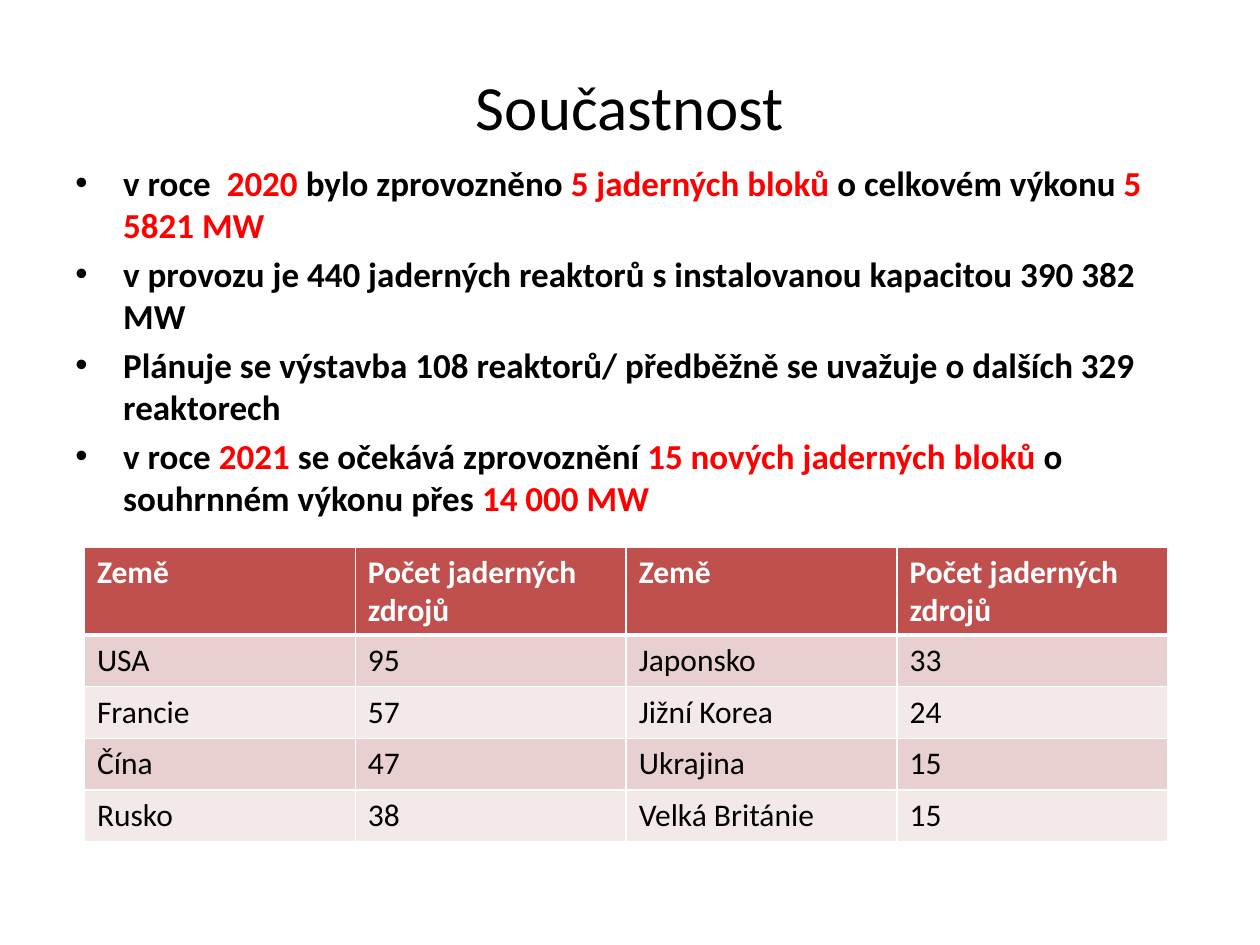
from lxml.etree import SubElement
from pptx import Presentation
from pptx.dml.color import RGBColor
from pptx.enum.text import MSO_ANCHOR, PP_ALIGN
from pptx.oxml.ns import qn
from pptx.util import Inches, Pt

WIDTH, HEIGHT = Inches(10), Inches(7.5)
FONT = "Calibri"
COLORS = {
    "text": "000000",
    "highlight": "FF0000",
    "header": "C0504D",
    "odd_row": "E8D0D0",
    "even_row": "F4E9E9",
    "white": "FFFFFF",
}
FACTS = [
    ["v roce  ", "2020", " bylo zprovozněno ", "5 jaderných bloků ",
     "o celkovém výkonu ", "5 5821 MW"],
    ["v provozu je 440 jaderných reaktorů s instalovanou kapacitou 390 382 MW"],
    ["Plánuje se výstavba 108 reaktorů/ předběžně se uvažuje o dalších 329 reaktorech"],
    ["v roce", " 2021 ", "se očekává zprovoznění ", "15 nových jaderných bloků ",
     "o souhrnném výkonu přes ", "14 000 MW"],
]
COUNTRIES = [
    ["Země", "Počet jaderných zdrojů"] * 2,
    ["USA", "95", "Japonsko", "33"],
    ["Francie", "57", "Jižní Korea", "24"],
    ["Čína", "47", "Ukrajina", "15"],
    ["Rusko", "38", "Velká Británie", "15"],
]


def rgb(name):
    """Return the named palette colour."""
    return RGBColor.from_string(COLORS[name])


def add_bullet(paragraph, indent):
    """Give a paragraph a round bullet with a hanging indent."""
    properties = paragraph._p.get_or_add_pPr()
    properties.set("marL", str(indent))
    properties.set("indent", str(-indent))
    SubElement(properties, qn("a:buFont"), typeface="Arial")
    SubElement(properties, qn("a:buChar"), char="•")


def write_text(frame, paragraphs, size, color="text", bold=False,
               align=PP_ALIGN.LEFT, bullet_indent=None, gap=0):
    """Write paragraphs whose every second piece is highlighted."""
    frame.word_wrap = True
    for index, pieces in enumerate(paragraphs):
        paragraph = frame.add_paragraph() if index else frame.paragraphs[0]
        if bullet_indent:
            add_bullet(paragraph, bullet_indent)
        paragraph.alignment = align
        if index and gap:
            paragraph.space_before = Pt(gap)
        for position, piece in enumerate(pieces):
            run = paragraph.add_run()
            run.text = piece
            run.font.name, run.font.size, run.font.bold = FONT, Pt(size), bold
            run.font.color.rgb = rgb("highlight" if position % 2 else color)


def add_text_block(slide, top, height, paragraphs, anchor=MSO_ANCHOR.TOP, **text_format):
    """Add a text block spanning the central nine tenths of the slide."""
    block = slide.shapes.add_textbox(
        int(WIDTH * 0.05), top, int(WIDTH * 0.9), height)
    block.text_frame.vertical_anchor = anchor
    write_text(block.text_frame, paragraphs, **text_format)


def add_borders(cell, **widths):
    """Draw white cell borders with widths in points by side."""
    properties = cell._tc.get_or_add_tcPr()
    for side in "LRTB":
        line = SubElement(properties, qn(f"a:ln{side}"), w=str(Pt(widths.get(side, 1))))
        fill = SubElement(line, qn("a:solidFill"))
        SubElement(fill, qn("a:srgbClr"), val=COLORS["white"])


def add_country_table(slide, left, top, column_width, header_height, row_height):
    """Add the table of reactor counts by country."""
    row_count, column_count = len(COUNTRIES), len(COUNTRIES[0])
    table = slide.shapes.add_table(
        row_count, column_count, left, top, column_width * column_count,
        header_height + row_height * (row_count - 1)).table
    for column in table.columns:
        column.width = column_width
    for row_index, values in enumerate(COUNTRIES):
        is_header = row_index == 0
        table.rows[row_index].height = header_height if is_header else row_height
        row_fill = "header" if is_header else ("even_row", "odd_row")[row_index % 2]
        for column_index, value in enumerate(values):
            cell = table.cell(row_index, column_index)
            add_borders(cell, T=3 if row_index == 1 else 1, B=3 if is_header else 1)
            cell.fill.solid()
            cell.fill.fore_color.rgb = rgb(row_fill)
            write_text(cell.text_frame, [[value]], size=18, bold=is_header,
                       color="white" if is_header else "text")


def main():
    """Build and save the slide."""
    presentation = Presentation()
    presentation.slide_width, presentation.slide_height = WIDTH, HEIGHT
    slide = presentation.slides.add_slide(presentation.slide_layouts[6])
    title_top, facts_top = Inches(0.44), Inches(1.23)
    add_text_block(slide, title_top, facts_top - title_top, [["Součastnost"]],
                   anchor=MSO_ANCHOR.MIDDLE, size=36, align=PP_ALIGN.CENTER)
    add_text_block(slide, facts_top, Inches(5.32), FACTS, size=20, bold=True,
                   bullet_indent=Inches(0.38), gap=4)
    add_country_table(slide, Inches(0.67), Inches(4.34), column_width=Inches(2.15),
                      header_height=Inches(0.7), row_height=Inches(0.41))
    presentation.save("out.pptx")


if __name__ == "__main__":
    main()
